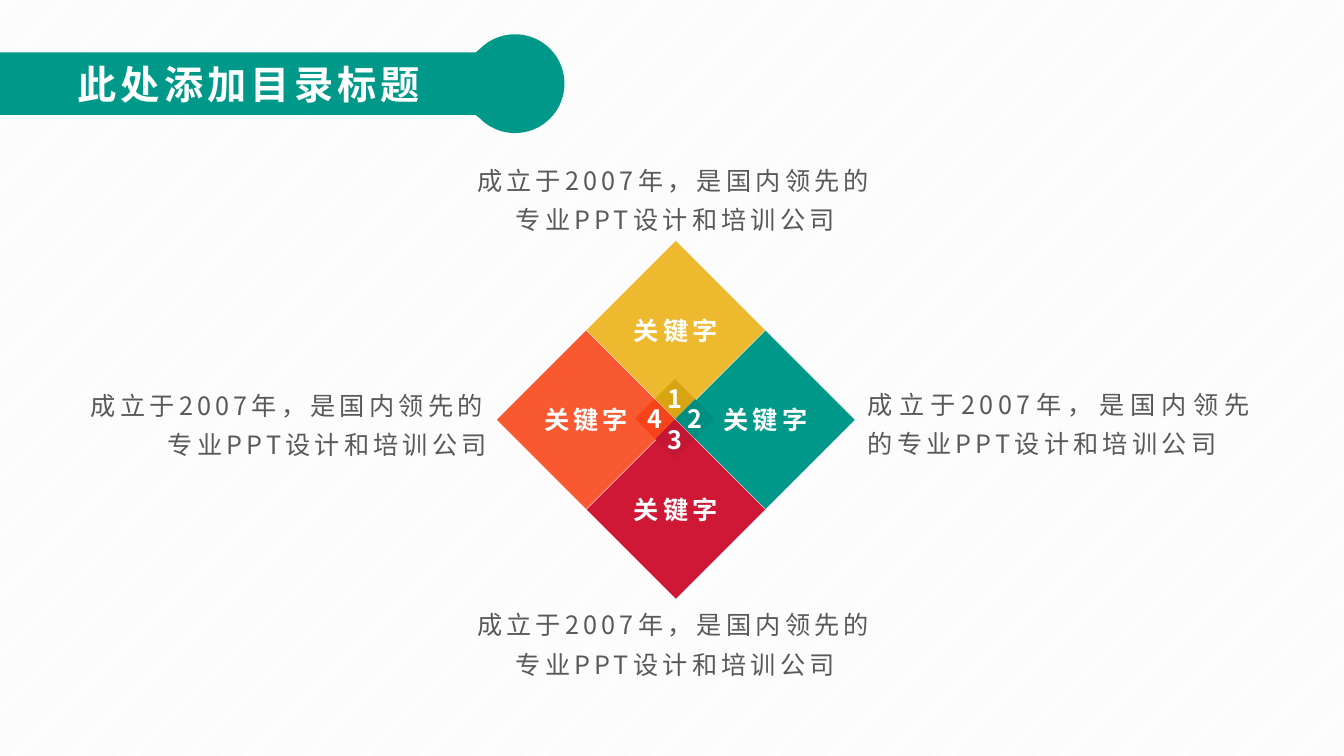
from dataclasses import dataclass
from math import cos, radians, sin

from lxml.etree import SubElement
from pptx import Presentation
from pptx.dml.color import RGBColor
from pptx.enum.dml import MSO_PATTERN
from pptx.enum.shapes import MSO_SHAPE
from pptx.enum.text import MSO_ANCHOR, MSO_AUTO_SIZE as AUTO_SIZE, PP_ALIGN as ALIGN
from pptx.oxml.ns import qn
from pptx.shapes.base import BaseShape
from pptx.slide import Slide
from pptx.util import Emu, Pt

FONT = "Noto Sans CJK SC"
TEAL, WHITE, GREY = "009989", "FFFFFF", "595959"
DESCRIPTION = "成立于2007年，是国内领先的专业PPT设计和培训公司"
DIAMOND_SIZE, DIAMOND_STEP = 177, 89
BADGE_SIZE, BADGE_STEP = 39, 20


@dataclass
class Quarter:
    number: int
    dx: int
    dy: int
    fill: str
    badge_fill: str


@dataclass
class Description:
    left: int
    top: int
    width: int
    align: ALIGN


QUARTERS = [
    Quarter(3, 0, 1, "CE1836", "C31734"),
    Quarter(4, -1, 0, "F85931", "F74319"),
    Quarter(2, 1, 0, TEAL, "008E80"),
    Quarter(1, 0, -1, "EDB92E", "D8A412"),
]
DESCRIPTIONS = [
    Description(458, 591, 424, ALIGN.CENTER),
    Description(851, 372, 403, ALIGN.JUSTIFY),
    Description(79, 373, 414, ALIGN.RIGHT),
    Description(458, 150, 424, ALIGN.CENTER),
]


def px(length: float) -> Emu:
    """Convert px, 100 to the inch, into EMU."""
    return Emu(round(length * 9144))


def rgb(colour: str) -> RGBColor:
    return RGBColor.from_string(colour)


def paint(shape: BaseShape, colour: str) -> None:
    shape.fill.solid()
    shape.fill.fore_color.rgb = rgb(colour)
    shape.line.fill.background()
    shape.shadow.inherit = False


def write(shape: BaseShape, text: str, colour: str, align: ALIGN, size: int = 18,
          bold: bool = True, spacing: int = 3) -> None:
    frame = shape.text_frame
    frame.word_wrap = True
    frame.text = text
    paragraph = frame.paragraphs[0]
    paragraph.alignment = align
    font = paragraph.font
    font.name, font.size, font.bold = FONT, Pt(size), bold
    font.color.rgb = rgb(colour)
    # East Asian typeface and letter spacing
    properties = paragraph._p.pPr.find(qn("a:defRPr"))
    properties.set("spc", str(spacing * 100))
    SubElement(properties, qn("a:ea")).set("typeface", FONT)


def add_diamond(slide: Slide, left: int, top: int, size: int, fill: str,
                label: str, spacing: int) -> None:
    diamond = slide.shapes.add_shape(MSO_SHAPE.DIAMOND, px(left), px(top), px(size), px(size))
    paint(diamond, fill)
    write(diamond, label, WHITE, ALIGN.CENTER, spacing=spacing)
    frame = diamond.text_frame
    frame.vertical_anchor = MSO_ANCHOR.MIDDLE
    frame.margin_left = frame.margin_right = frame.margin_top = frame.margin_bottom = 0


def add_description(slide: Slide, item: Description) -> None:
    box = slide.shapes.add_textbox(px(item.left), px(item.top), px(item.width), px(88))
    write(box, DESCRIPTION, GREY, item.align, bold=False)
    box.text_frame.paragraphs[0].line_spacing = 1.3
    box.text_frame.auto_size = AUTO_SIZE.SHAPE_TO_FIT_TEXT


def add_banner(slide: Slide) -> None:
    centre_x, centre_y, radius = 511, 83, 49
    knob = [(centre_x + radius * cos(radians(a)), centre_y + radius * sin(radians(a)))
            for a in range(-135, 136, 3)]
    outline = [(px(x), px(y)) for x, y in [(0, 52), (472, 52), *knob, (472, 114), (0, 114)]]
    builder = slide.shapes.build_freeform(*outline[0])
    builder.add_line_segments(outline[1:], close=True)
    paint(builder.convert_to_shape(), TEAL)


def place_title(slide: Slide) -> None:
    title = slide.shapes.title
    title.left, title.top, title.width, title.height = px(67), px(55), px(393), px(57)
    write(title, "此处添加目录标题", WHITE, ALIGN.LEFT, size=28)
    title.text_frame.vertical_anchor = MSO_ANCHOR.TOP
    title.text_frame.auto_size = AUTO_SIZE.SHAPE_TO_FIT_TEXT
    # Bring the title in front of its banner
    title._element.getparent().append(title._element)


def main() -> None:
    presentation = Presentation()
    presentation.slide_width, presentation.slide_height = Emu(12192000), px(750)
    slide = presentation.slides.add_slide(presentation.slide_layouts[5])

    # Striped background
    background = slide.background.fill
    background.patterned()
    background.pattern = MSO_PATTERN.LIGHT_UPWARD_DIAGONAL
    background.fore_color.rgb = rgb("F2F2F2")
    background.back_color.rgb = rgb(WHITE)

    # Four keyword diamonds, then their numbers around the centre
    for quarter in QUARTERS:
        add_diamond(slide, 582 + quarter.dx * DIAMOND_STEP, 328 + quarter.dy * DIAMOND_STEP,
                    DIAMOND_SIZE, quarter.fill, "关键字", 3)
    for quarter in QUARTERS:
        add_diamond(slide, 650 + quarter.dx * BADGE_STEP, 396 + quarter.dy * BADGE_STEP,
                    BADGE_SIZE, quarter.badge_fill, str(quarter.number), 0)

    # Descriptions
    for item in DESCRIPTIONS:
        add_description(slide, item)

    # Heading
    add_banner(slide)
    place_title(slide)
    presentation.save("out.pptx")


if __name__ == "__main__":
    main()
